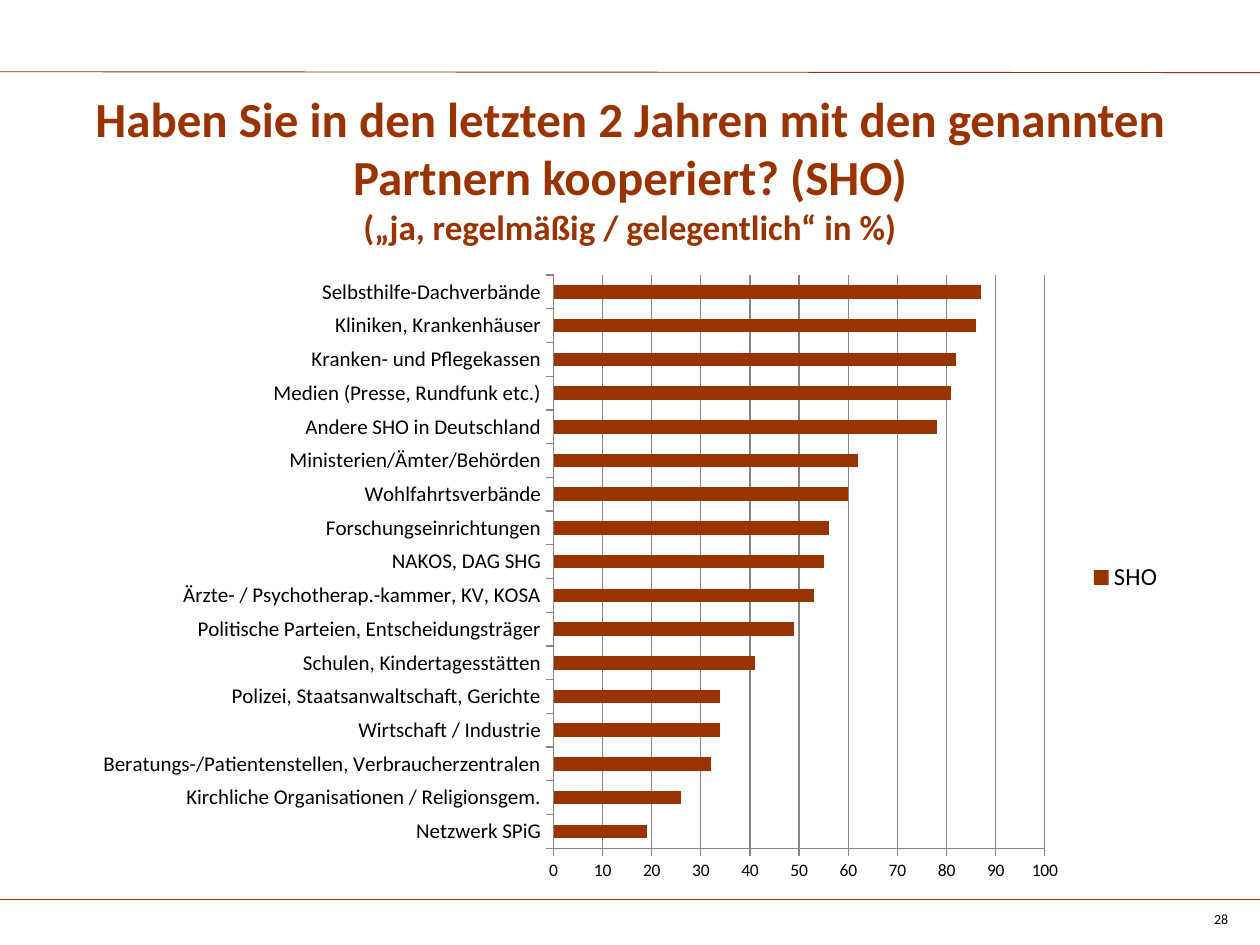
from lxml.etree import SubElement
from pptx import Presentation
from pptx.chart.data import CategoryChartData as ChartData
from pptx.dml.color import RGBColor as Rgb
from pptx.enum.chart import XL_CHART_TYPE as Kind, XL_LEGEND_POSITION as Side
from pptx.enum.chart import XL_TICK_MARK as Tick
from pptx.enum.shapes import MSO_CONNECTOR as Link
from pptx.enum.text import MSO_ANCHOR as Anchor, MSO_AUTO_SIZE as Fit, PP_ALIGN as Align
from pptx.oxml.ns import qn
from pptx.util import Pt

COLORS = {"rust": "993300", "black": "000000", "grey": "868686"}
FONT = "Calibri"
PARTNERS = [
    ("Netzwerk SPiG", 19),
    ("Kirchliche Organisationen / Religionsgem.", 26),
    ("Beratungs-/Patientenstellen, Verbraucherzentralen", 32),
    ("Wirtschaft / Industrie", 34),
    ("Polizei, Staatsanwaltschaft, Gerichte", 34),
    ("Schulen, Kindertagesstätten", 41),
    ("Politische Parteien, Entscheidungsträger", 49),
    ("Ärzte- / Psychotherap.-kammer, KV, KOSA", 53),
    ("NAKOS, DAG SHG", 55),
    ("Forschungseinrichtungen", 56),
    ("Wohlfahrtsverbände", 60),
    ("Ministerien/Ämter/Behörden", 62),
    ("Andere SHO in Deutschland", 78),
    ("Medien (Presse, Rundfunk etc.)", 81),
    ("Kranken- und Pflegekassen", 82),
    ("Kliniken, Krankenhäuser", 86),
    ("Selbsthilfe-Dachverbände", 87),
]


def color(name):
    return Rgb.from_string(COLORS[name])


def style(font, size, tone="black", bold=False):
    font.name, font.size, font.bold = FONT, Pt(size), bold
    font.color.rgb = color(tone)


def write(para, text, size, align=Align.CENTER, **look):
    """Append a formatted run to the paragraph."""
    para.alignment = align
    run = para.add_run()
    run.text = text
    style(run.font, size, **look)


def set_frame(shape, anchor):
    frame = shape.text_frame
    frame.word_wrap, frame.auto_size = True, Fit.NONE
    frame.vertical_anchor = anchor
    frame.margin_left = frame.margin_right = 0
    frame.margin_top = frame.margin_bottom = 0
    return frame.paragraphs[0]


def add_title(slide):
    title = slide.shapes.title
    title.left, title.top, title.width, title.height = Pt(48), Pt(48), Pt(624), Pt(96)
    para = set_frame(title, Anchor.MIDDLE)
    para.line_spacing = 1.0
    write(para, "Haben Sie in den letzten 2 Jahren mit den genannten Partnern "
          "kooperiert? (SHO)", 28, tone="rust", bold=True)
    para.add_line_break()
    write(para, "(„ja, regelmäßig / gelegentlich“ in %)", 20, tone="rust", bold=True)


def add_rule(slide, start, end):
    rule = slide.shapes.add_connector(Link.STRAIGHT, Pt(0), Pt(start), Pt(720), Pt(end))
    rule.line.color.rgb = color("rust")
    rule.line.width = Pt(0.5)
    SubElement(rule.line._get_or_add_ln().getparent(), qn("a:effectLst"))


def add_number(slide, text):
    box = slide.shapes.add_textbox(Pt(666), Pt(519), Pt(36), Pt(12))
    write(set_frame(box, Anchor.MIDDLE), text, 8, align=Align.RIGHT)


def place_plot(chart, **share):
    """Fix the inner plot area, given as shares of the chart frame."""
    area = chart._chartSpace.chart.plotArea
    for old in area.findall(qn("c:layout")):
        area.remove(old)
    layout = area.makeelement(qn("c:layout"))
    area.insert(0, layout)
    manual = SubElement(layout, qn("c:manualLayout"))
    parts = {"layoutTarget": "inner", "xMode": "edge", "yMode": "edge", **share}
    for name, value in parts.items():
        SubElement(manual, qn("c:" + name)).set("val", str(value))


def add_bars(slide):
    names, values = zip(*PARTNERS)
    data = ChartData()
    data.categories = names
    data.add_series("SHO", values)
    chart = slide.shapes.add_chart(Kind.BAR_CLUSTERED, Pt(48), Pt(150),
                                   Pt(624), Pt(360), data).chart
    chart.has_title = False
    style(chart.font, 10)
    place_plot(chart, x=0.43, y=0.02, w=0.45, h=0.91)

    plot = chart.plots[0]
    plot.gap_width, plot.vary_by_categories = 150, False
    fill = plot.series[0].format.fill
    fill.solid()
    fill.fore_color.rgb = color("rust")

    cats, scale = chart.category_axis, chart.value_axis
    scale.minimum_scale, scale.maximum_scale, scale.major_unit = 0, 100, 10
    scale.has_major_gridlines = True
    for axis, size in ((cats, 12), (scale, 10)):
        axis.major_tick_mark = Tick.OUTSIDE
        axis.format.line.color.rgb = color("grey")
        style(axis.tick_labels.font, size)
    scale.major_gridlines.format.line.color.rgb = color("grey")

    chart.has_legend = True
    chart.legend.position = Side.RIGHT
    chart.legend.include_in_layout = False
    style(chart.legend.font, 14)


def main():
    deck = Presentation()
    deck.slide_width, deck.slide_height = Pt(720), Pt(540)
    slide = deck.slides.add_slide(deck.slide_layouts[5])
    add_rule(slide, 41, 41.5)
    add_rule(slide, 514, 514)
    add_title(slide)
    add_number(slide, "28")
    add_bars(slide)
    deck.save("out.pptx")


if __name__ == "__main__":
    main()
